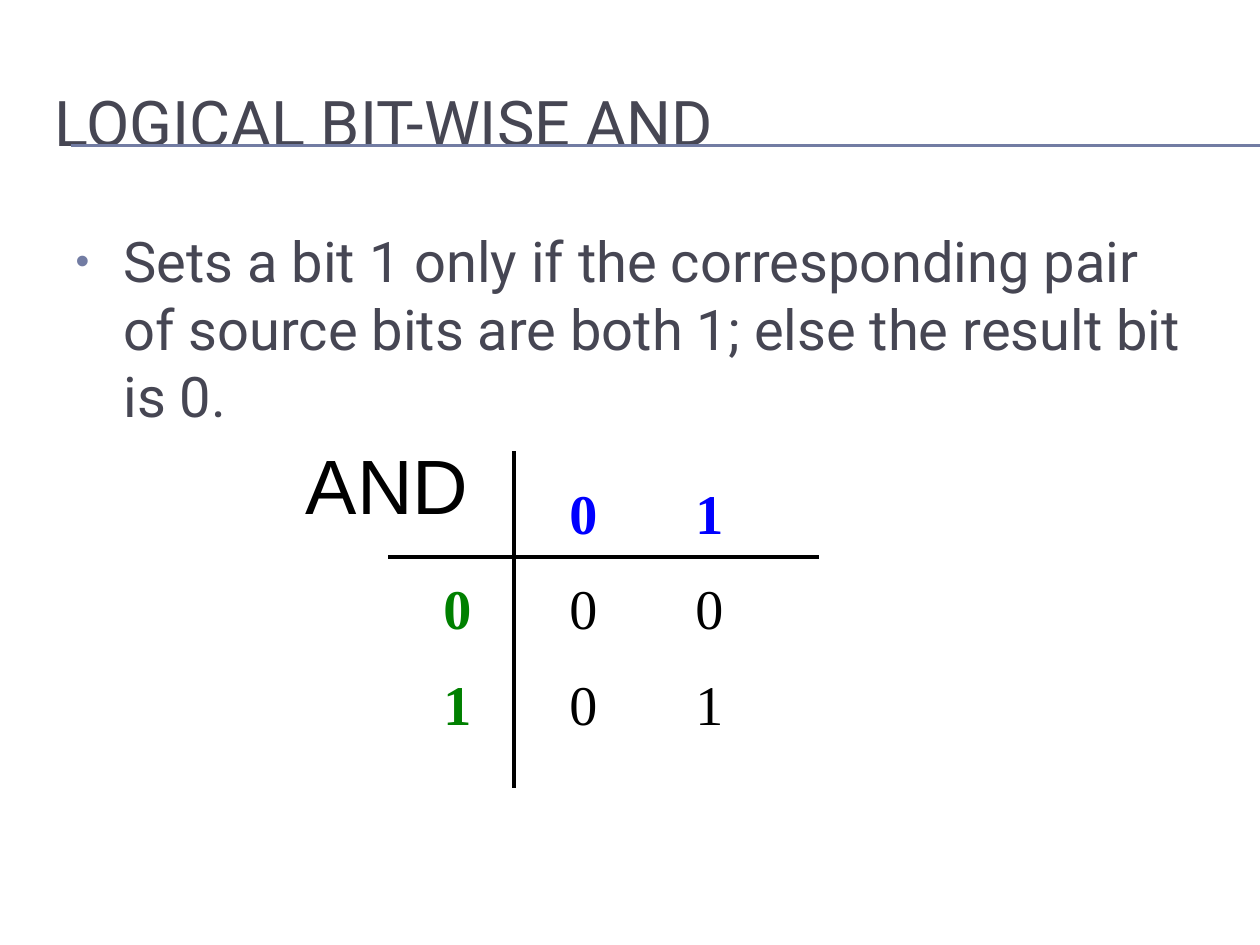
"""Build the slide that explains the logical bit-wise AND."""
from dataclasses import dataclass

from lxml.etree import SubElement
from pptx import Presentation
from pptx.dml.color import RGBColor
from pptx.enum.shapes import MSO_CONNECTOR
from pptx.enum.text import MSO_ANCHOR, MSO_AUTO_SIZE, PP_ALIGN
from pptx.oxml.ns import qn
from pptx.util import Inches, Pt


@dataclass(frozen=True)
class Theme:
    """Colours, fonts and type sizes of the slide."""
    ink: str = "464653"
    accent: str = "727CA3"
    black: str = "000000"
    column: str = "0000FF"
    row: str = "008000"
    main_font: str = "Roboto"
    table_font: str = "Times New Roman"
    label_font: str = "Arial"
    title_size: int = 36
    body_size: int = 32
    label_size: int = 44


THEME = Theme()


def place(sp, box):
    """Move a shape to a box of left, top, width and height in inches."""
    sp.left, sp.top, sp.width, sp.height = map(Inches, box)


def add_run(p, text, font, size, color, bold=None):
    """Append one formatted run to a paragraph."""
    r = p.add_run()
    r.text = text
    r.font.name, r.font.size, r.font.bold = font, Pt(size), bold
    r.font.color.rgb = RGBColor.from_string(color)


def space_before(p, percent):
    """Set the space before a paragraph as a share of its line."""
    spacing = SubElement(p._p.get_or_add_pPr(), qn("a:spcBef"))
    SubElement(spacing, qn("a:spcPct"), val=str(percent * 1000))


def add_tab_stops(p, step, count):
    """Give a paragraph evenly spaced left tab stops."""
    tabs = SubElement(p._p.get_or_add_pPr(), qn("a:tabLst"))
    for i in range(1, count + 1):
        SubElement(tabs, qn("a:tab"), pos=str(Inches(step * i)), algn="l")


def add_bullet(p, color, percent, indent):
    """Give a paragraph a coloured bullet with a hanging indent."""
    pPr = p._p.get_or_add_pPr()
    pPr.set("marL", str(Inches(indent)))
    pPr.set("indent", str(-Inches(indent)))
    SubElement(SubElement(pPr, qn("a:buClr")), qn("a:srgbClr"), val=color)
    SubElement(pPr, qn("a:buSzPct"), val=str(percent * 1000))
    SubElement(pPr, qn("a:buFont"), typeface="Arial")
    SubElement(pPr, qn("a:buChar"), char="•")


def add_line(s, start, end, color, width):
    """Draw a straight line between two points in inches."""
    line = s.shapes.add_connector(
        MSO_CONNECTOR.STRAIGHT, *map(Inches, (*start, *end)))
    line.line.color.rgb = RGBColor.from_string(color)
    line.line.width = Pt(width)
    SubElement(line._element.spPr, qn("a:effectLst"))


def add_text_box(s, box):
    """Add an empty wrapping text box and return its text frame."""
    tf = s.shapes.add_textbox(*map(Inches, box)).text_frame
    tf.word_wrap = True
    return tf


def fill_title(s, box, text):
    """Set the title over its double rule."""
    left, top, width, height = box
    for offset in (0.65, 0.66):
        add_line(s, (left + 0.23, top + offset), (10, top + offset),
                 THEME.accent, 0.75)
    sp = s.shapes.title
    place(sp, box)
    tf = sp.text_frame
    tf.auto_size = MSO_AUTO_SIZE.NONE
    tf.vertical_anchor = MSO_ANCHOR.MIDDLE
    p = tf.paragraphs[0]
    p.alignment = PP_ALIGN.LEFT
    add_run(p, text, THEME.main_font, THEME.title_size, THEME.ink)


def fill_body(s, box, text):
    """Set the bulleted definition."""
    sp = s.placeholders[1]
    place(sp, box)
    tf = sp.text_frame
    tf.auto_size = MSO_AUTO_SIZE.NONE
    p = tf.paragraphs[0]
    space_before(p, 20)
    add_bullet(p, THEME.accent, 70, 0.38)
    add_run(p, text, THEME.main_font, THEME.body_size, THEME.ink)


def add_truth_table(s, box, name, rows):
    """Draw the operator name, the crossed rules and the tabbed bits."""
    left, top, width, height = box
    mid_x, mid_y = left + 1.75, top + 1
    tf = add_text_box(s, (left + 1.09, top + 0.33, 2.75, 2.23))
    for i, (head, values) in enumerate(rows):
        p = tf.add_paragraph() if i else tf.paragraphs[0]
        space_before(p, 50)
        add_tab_stops(p, 1, 2)
        is_header = i == 0
        value_color = THEME.column if is_header else THEME.black
        for text, color, bold in ((head, THEME.row, not is_header),
                                  (values, value_color, is_header)):
            add_run(p, text, THEME.table_font, THEME.body_size, color, bold)
    add_line(s, (left + 0.75, mid_y), (left + width, mid_y), THEME.black, 2)
    add_line(s, (mid_x, top + height), (mid_x, top + 0.16), THEME.black, 2)
    p = add_text_box(s, (left, top, 1.58, 0.83)).paragraphs[0]
    space_before(p, 50)
    add_run(p, name, THEME.label_font, THEME.label_size, THEME.black)


def main():
    """Assemble the slide and save it."""
    prs = Presentation()
    prs.slide_width, prs.slide_height = Inches(10), Inches(7.5)
    s = prs.slides.add_slide(prs.slide_layouts[1])
    fill_title(s, (0.33, 0.5, 9.5, 0.92), "LOGICAL BIT-WISE AND")
    fill_body(s, (0.5, 1.75, 9, 2.11),
              "Sets a bit 1 only if the corresponding pair of source bits "
              "are both 1; else the result bit is 0.")
    add_truth_table(s, (2.33, 3.42, 4.17, 2.83), "AND",
                    [("\t", "0\t1"), ("0", "\t0\t0"), ("1", "\t0\t1")])
    prs.save("out.pptx")


if __name__ == "__main__":
    main()
